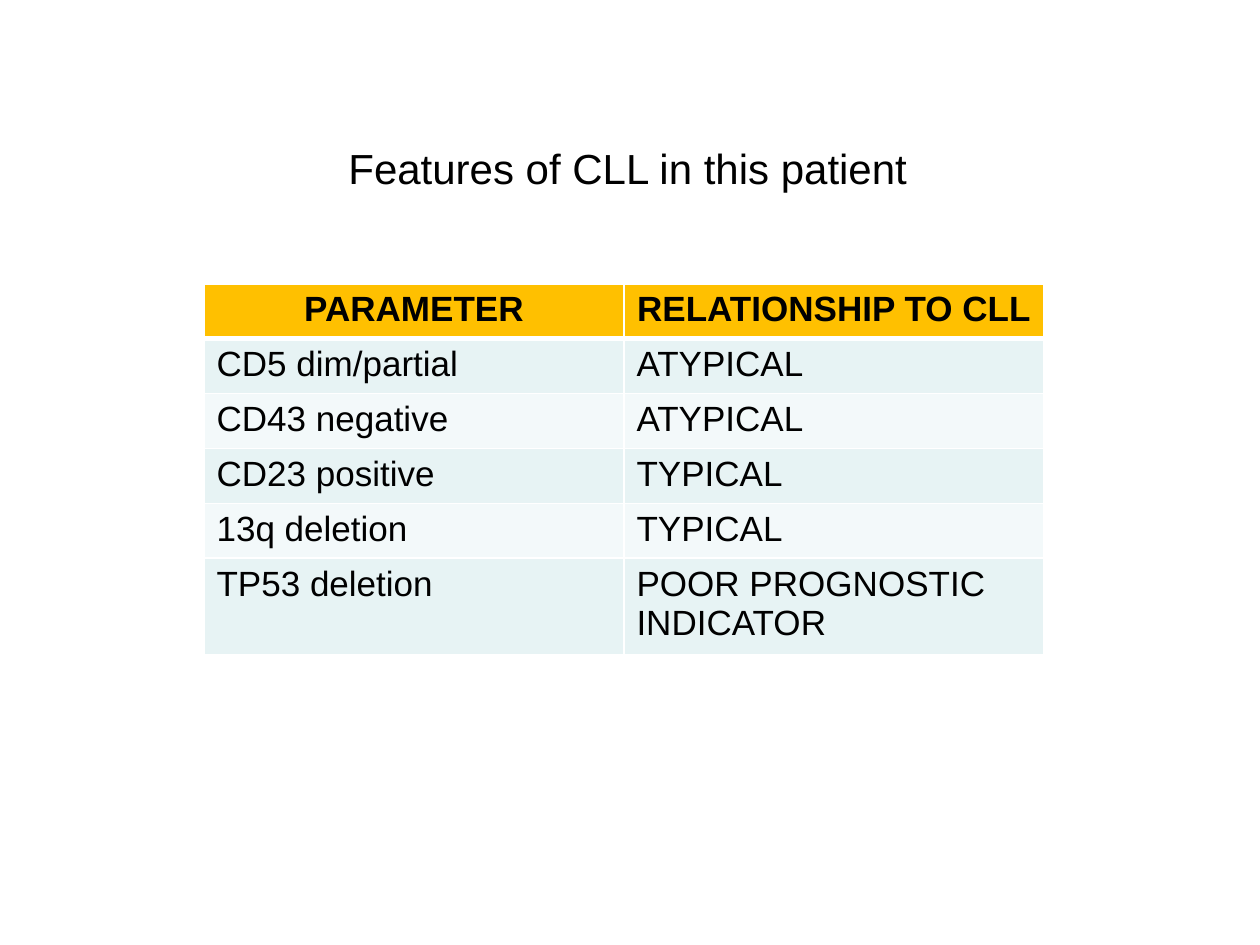
from pptx import Presentation
from pptx.dml.color import RGBColor
from pptx.enum.text import MSO_AUTO_SIZE, PP_ALIGN
from pptx.oxml import parse_xml
from pptx.oxml.ns import nsdecls
from pptx.util import Pt

CENTER, LEFT = PP_ALIGN.CENTER, PP_ALIGN.LEFT
FIT_SHAPE = MSO_AUTO_SIZE.SHAPE_TO_FIT_TEXT
PX_PER_INCH = 126

ROWS = [
    ("PARAMETER", "RELATIONSHIP TO CLL"),
    ("CD5 dim/partial", "ATYPICAL"),
    ("CD43 negative", "ATYPICAL"),
    ("CD23 positive", "TYPICAL"),
    ("13q deletion", "TYPICAL"),
    ("TP53 deletion", "POOR PROGNOSTIC INDICATOR"),
]
ROW_HEIGHTS = [54, 55, 54, 55, 55, 96]


def px(n):
    return round(n * 914400 / PX_PER_INCH)


def color(value):
    return RGBColor.from_string(value)


class Deck:
    font = "Arial"
    ink = "000000"
    line = "FFFFFF"
    header = "FFC000"
    bands = ("F3F9FA", "E7F3F4")

    def __init__(self, prs):
        self.s = prs.slides.add_slide(prs.slide_layouts[6])

    def set_text(self, tf, text, size, bold=False, align=LEFT):
        tf.text = text
        p = tf.paragraphs[0]
        p.alignment = align
        for r in p.runs:
            r.font.name = self.font
            r.font.size = Pt(size)
            r.font.bold = bold
            r.font.color.rgb = color(self.ink)

    def title(self, text, x, y, w, h):
        tf = self.s.shapes.add_textbox(px(x), px(y), px(w), px(h)).text_frame
        tf.word_wrap = False
        tf.auto_size = FIT_SHAPE
        self.set_text(tf, text, 24)

    def borders(self, cell, bottom, top):
        tcPr = cell._tc.get_or_add_tcPr()
        widths = (("lnL", 1), ("lnR", 1), ("lnT", top), ("lnB", bottom))
        for i, (tag, width) in enumerate(widths):
            tcPr.insert(i, parse_xml(
                f'<a:{tag} {nsdecls("a")} w="{Pt(width)}"><a:solidFill>'
                f'<a:srgbClr val="{self.line}"/></a:solidFill></a:{tag}>'))

    def table(self, rows, heights, x, y, col_width):
        cols = len(rows[0])
        table = self.s.shapes.add_table(
            len(rows), cols, px(x), px(y),
            px(col_width * cols), px(sum(heights))).table
        for col in table.columns:
            col.width = px(col_width)
        for i, (values, height) in enumerate(zip(rows, heights)):
            table.rows[i].height = px(height)
            head = i == 0
            for j, text in enumerate(values):
                cell = table.cell(i, j)
                self.set_text(cell.text_frame, text, 20, head,
                              CENTER if head else LEFT)
                cell.fill.solid()
                cell.fill.fore_color.rgb = color(
                    self.header if head else self.bands[i % 2])
                self.borders(cell, 3 if head else 1, 3 if i == 1 else 1)


def main():
    prs = Presentation()
    prs.slide_width, prs.slide_height = px(1260), px(945)
    deck = Deck(prs)
    deck.title("Features of CLL in this patient", 336, 136, 586, 63)
    deck.table(ROWS, ROW_HEIGHTS, 204, 284, 420)
    prs.save("out.pptx")


if __name__ == "__main__":
    main()
